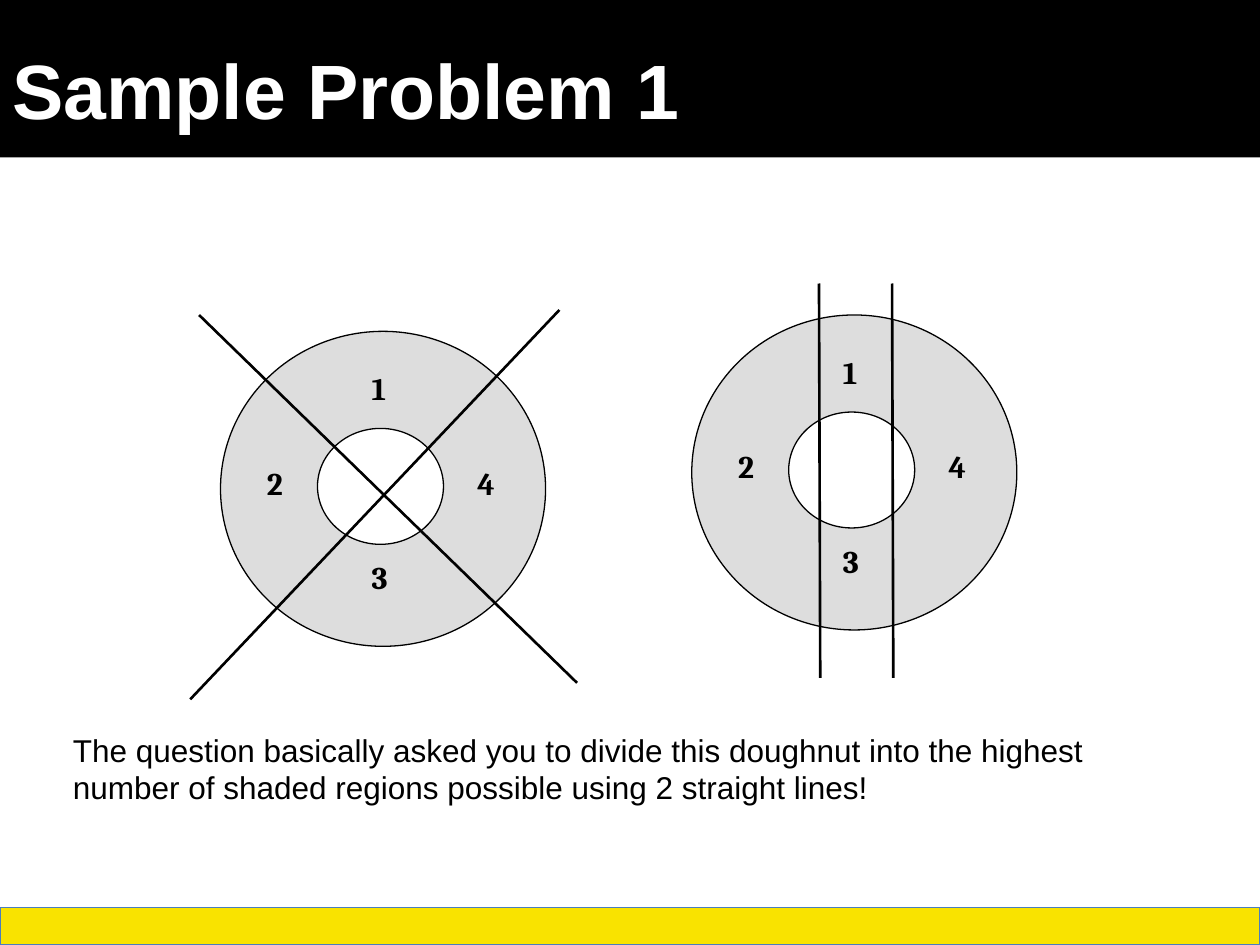
from lxml import etree
from pptx import Presentation
from pptx import util as u
from pptx.dml.color import RGBColor
from pptx.enum import shapes, text
from pptx.oxml.ns import qn

COLORS = {"black": "000000", "white": "FFFFFF", "yellow": "F9E300",
          "blue": "4B7EBC", "gray": "DDDDDD"}

deck = Presentation()
deck.slide_width, deck.slide_height = u.Inches(10), u.Inches(7.5)
page = deck.slides.add_slide(deck.slide_layouts[6])
cell = deck.slide_width / 10  # square grid, 10 columns by 7.5 rows


def add_shape(kind, area, fill, line=None):
    shape = page.shapes.add_shape(kind, *(round(n * cell) for n in area))
    shape.shadow.inherit = False
    shape.fill.solid()
    shape.fill.fore_color.rgb = RGBColor.from_string(COLORS[fill])
    if line:
        shape.line.color.rgb = RGBColor.from_string(COLORS[line])
        shape.line.width = u.Pt(0.75)
    else:
        shape.line.fill.background()


def add_text(words, area, size, font="Arial", color="black", bold=False,
             anchor=text.MSO_ANCHOR.TOP):
    box = page.shapes.add_textbox(*(round(n * cell) for n in area))
    box.text_frame.word_wrap = True
    box.text_frame.vertical_anchor = anchor
    span = box.text_frame.paragraphs[0].add_run()
    span.text = words
    span.font.name, span.font.size, span.font.bold = font, u.Pt(size), bold
    span.font.color.rgb = RGBColor.from_string(COLORS[color])


# Title band and footer bar
rectangle, ellipse = shapes.MSO_SHAPE.RECTANGLE, shapes.MSO_SHAPE.OVAL
add_shape(rectangle, (0, 0, 10, 1.25), "black")
add_shape(rectangle, (0, 7.2, 10, 0.3), "yellow", "blue")
add_text("Sample Problem 1", (0, 0.08, 9.5, 1.25), 44, color="white",
         bold=True, anchor=text.MSO_ANCHOR.MIDDLE)

# Each doughnut: its left and top, then the two cuts as x1, y1, x2, y2
doughnuts = [
    (1.75, 2.63, [(1.58, 2.5, 4.58, 5.42), (4.44, 2.46, 1.51, 5.55)]),
    (5.49, 2.5, [(6.5, 2.25, 6.51, 5.38), (7.08, 2.25, 7.09, 5.38)]),
]
region_offsets = [(1.1, 0.25), (0.27, 1), (1.1, 1.75), (1.94, 1)]

for left, top, cuts in doughnuts:
    add_shape(ellipse, (left, top, 2.58, 2.5), "gray", "black")
    add_shape(ellipse, (left + 0.77, top + 0.77, 1, 0.92), "white", "black")
    for cut in cuts:
        line = page.shapes.add_connector(
            shapes.MSO_CONNECTOR.STRAIGHT, *(round(n * cell) for n in cut))
        line.line.color.rgb = RGBColor.from_string(COLORS["black"])
        line.line.width = u.Pt(1.5)
        etree.SubElement(line._element.spPr, qn("a:effectLst"))
    for number, (across, down) in enumerate(region_offsets, start=1):
        add_text(str(number), (left + across, top + down, 0.42, 0.4), 18,
                 font="Cambria", bold=True)

add_text("The question basically asked you to divide this doughnut into the "
         "highest number of shaded regions possible using 2 straight lines!",
         (0.48, 5.75, 8.92, 1.04), 18)

deck.save("out.pptx")
